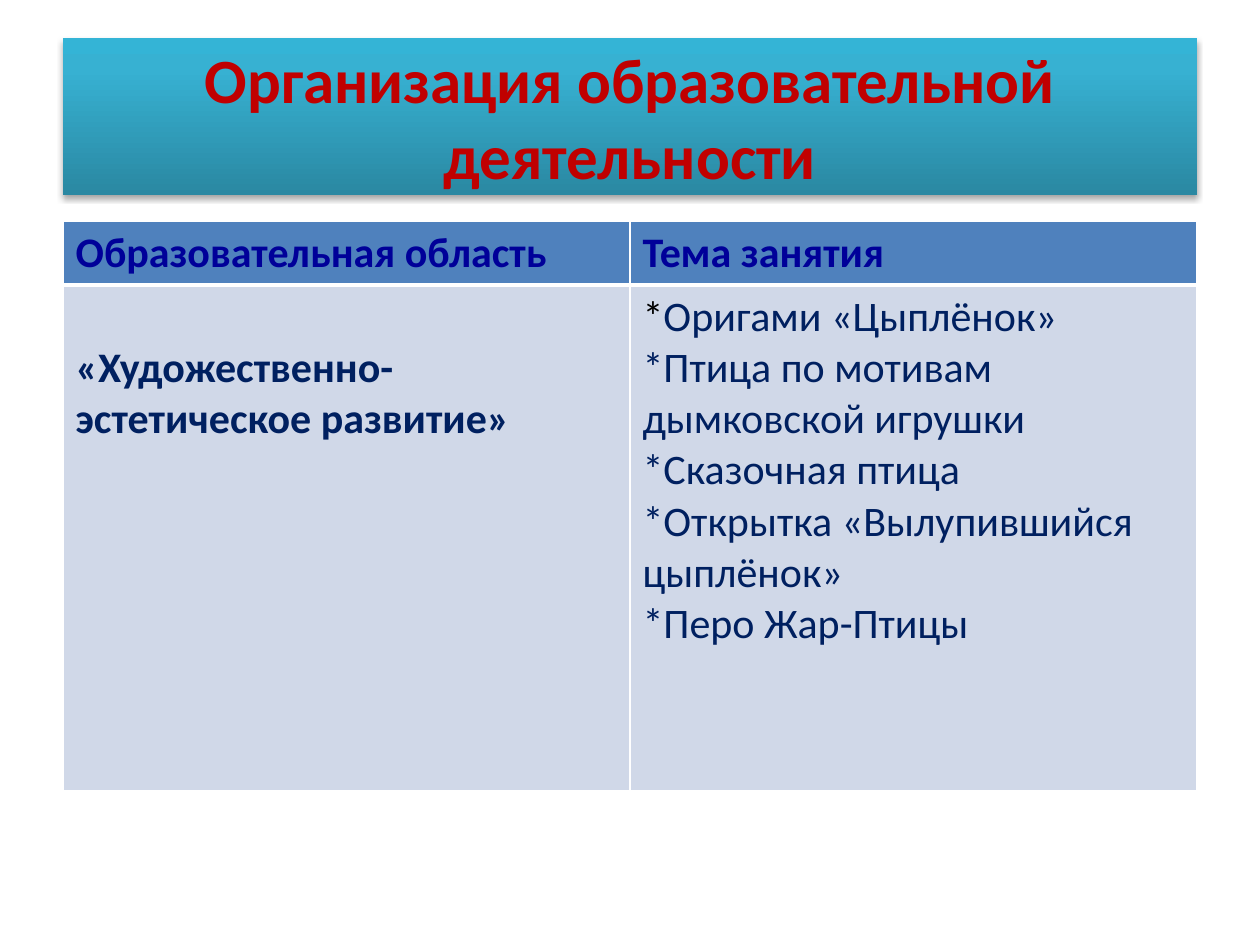
from lxml.etree import SubElement
from pptx import Presentation
from pptx.dml.color import RGBColor
from pptx.enum.text import MSO_ANCHOR, PP_ALIGN
from pptx.oxml import parse_xml
from pptx.oxml.ns import nsdecls, qn
from pptx.util import Pt

PX = 7257
FONT = "Calibri"
LINE = 51
COLORS = {
    "title": "C00000", "head": "000099", "text": "002060", "star": "000000",
    "dark": "2A88A2", "mid": "37B1D2", "light": "34B4D6",
    "band": "4F81BD", "cell": "D0D8E8", "edge": "FFFFFF", "shade": "000000",
}
HEADS = ["Образовательная область", "Тема занятия"]
AREA = "«Художественно-эстетическое развитие»"
TOPICS = [
    "Оригами «Цыплёнок»",
    "Птица по мотивам дымковской игрушки",
    "Сказочная птица",
    "Открытка «Вылупившийся цыплёнок»",
    "Перо Жар-Птицы",
]


def px(n):
    return n * PX


def rgb(name):
    return RGBColor.from_string(COLORS[name])


def style(run, size, color, bold):
    font = run.font
    font.name, font.size, font.bold = FONT, Pt(size), bold
    font.color.rgb = rgb(color)


def glow(shape):
    stops = "".join(
        f'<a:gs pos="{pos * 1000}"><a:srgbClr val="{COLORS[name]}"/></a:gs>'
        for pos, name in [(0, "dark"), (80, "mid"), (100, "light")])
    props = shape._element.spPr
    props.append(parse_xml(
        f'<a:gradFill {nsdecls("a")} rotWithShape="1"><a:gsLst>{stops}</a:gsLst>'
        '<a:lin ang="16200000" scaled="0"/></a:gradFill>'))
    props.append(parse_xml(
        f'<a:effectLst {nsdecls("a")}><a:outerShdw blurRad="{Pt(3.1)}" '
        f'dist="{Pt(1.8)}" dir="5400000" rotWithShape="0">'
        f'<a:srgbClr val="{COLORS["shade"]}"><a:alpha val="35000"/></a:srgbClr>'
        '</a:outerShdw></a:effectLst>'))


def add_title(slide, left, top, width, height):
    title = slide.shapes.title
    title.left, title.top = px(left), px(top)
    title.width, title.height = px(width), px(height)
    glow(title)
    frame = title.text_frame
    frame.text = "Организация образовательной деятельности"
    frame.vertical_anchor = MSO_ANCHOR.MIDDLE
    para = frame.paragraphs[0]
    para.alignment = PP_ALIGN.CENTER
    style(para.runs[0], 36, "title", True)


def add_edges(cell, top, bottom):
    props = cell._tc.get_or_add_tcPr()
    for i, (side, width) in enumerate(
            [("L", 1), ("R", 1), ("T", top), ("B", bottom)]):
        line = props.makeelement(qn(f"a:ln{side}"), {"w": str(Pt(width))})
        fill = SubElement(line, qn("a:solidFill"))
        SubElement(fill, qn("a:srgbClr"), val=COLORS["edge"])
        props.insert(i, line)


def paint(cell, fill, top, bottom):
    cell.fill.solid()
    cell.fill.fore_color.rgb = rgb(fill)
    add_edges(cell, top, bottom)


def add_topics(frame):
    for i, topic in enumerate(TOPICS):
        para = frame.paragraphs[0] if i == 0 else frame.add_paragraph()
        star, name = para.add_run(), para.add_run()
        star.text, name.text = "*", topic
        style(star, 24, "text" if i else "star", False)
        style(name, 24, "text", False)


def add_plan(slide, left, top, width, height):
    table = slide.shapes.add_table(
        2, 2, px(left), px(top), px(width), px(height)).table
    head = 63
    table.rows[0].height = px(head)
    table.rows[1].height = px(height - head)
    for col, text in enumerate(HEADS):
        cell = table.cell(0, col)
        cell.text_frame.text = text
        style(cell.text_frame.paragraphs[0].runs[0], 24, "head", True)
        paint(cell, "band", 1, 3)
        paint(table.cell(1, col), "cell", 3, 1)
    area, topics = table.cell(1, 0), table.cell(1, 1)
    area.margin_top += px(LINE)
    area.text_frame.text = AREA
    style(area.text_frame.paragraphs[0].runs[0], 24, "text", True)
    add_topics(topics.text_frame)


def main():
    deck = Presentation()
    deck.slide_width, deck.slide_height = px(1260), px(945)
    slide = deck.slides.add_slide(deck.slide_layouts[5])
    add_title(slide, 63, 38, 1134, 157)
    add_plan(slide, 63, 221, 1134, 569)
    deck.save("out.pptx")


if __name__ == "__main__":
    main()
